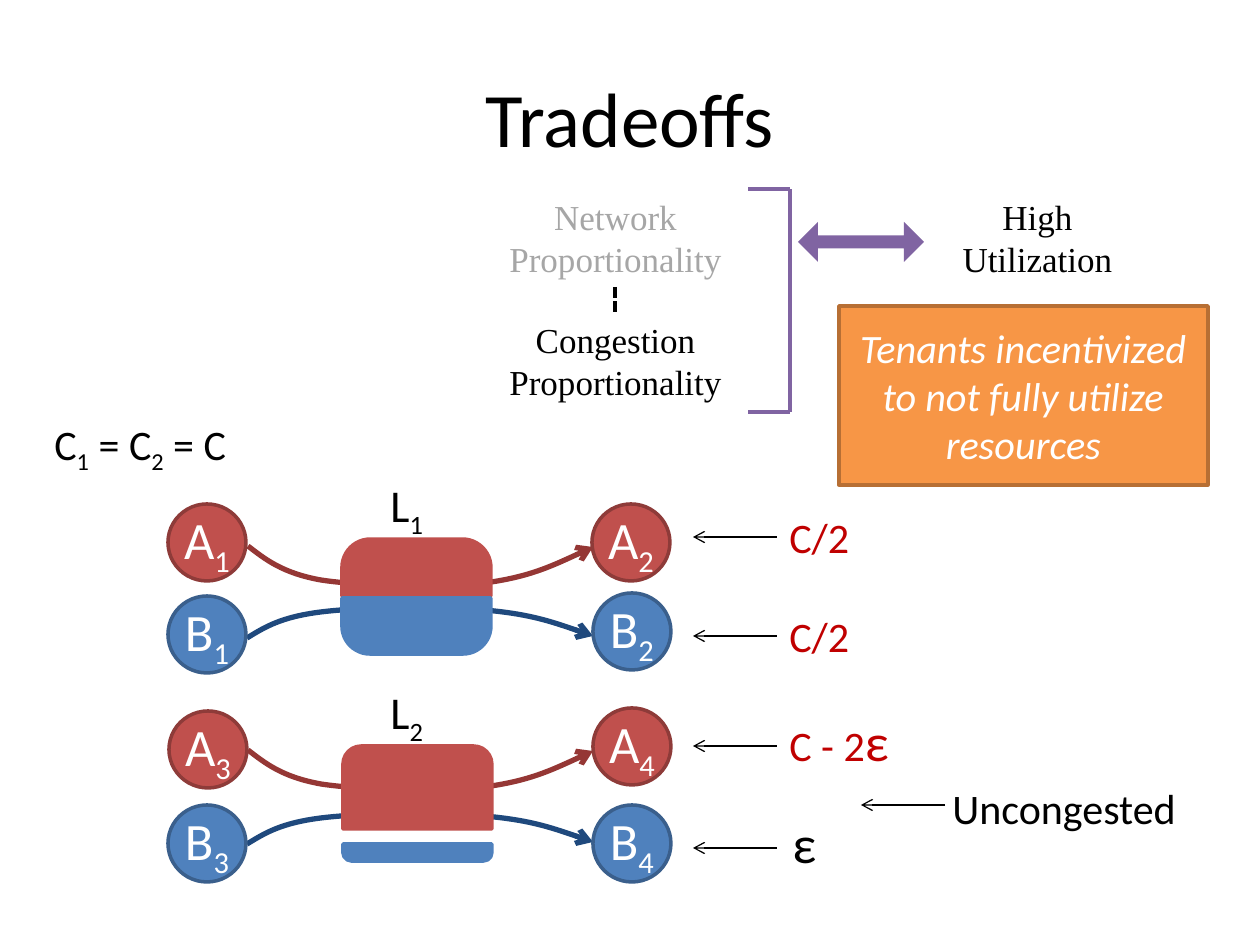
"""Build the Tradeoffs slide about two links shared by two tenants."""
import dataclasses
import typing

import pptx
import pptx.dml.color
import pptx.enum.dml
import pptx.enum.shapes
import pptx.enum.text
import pptx.oxml
import pptx.oxml.ns
import pptx.util

PIXELS_PER_INCH = 126
SLIDE_SIZE = (1260, 945)
RGBColor = pptx.dml.color.RGBColor
MSO_SHAPE = pptx.enum.shapes.MSO_SHAPE
PP_ALIGN = pptx.enum.text.PP_ALIGN
BLACK = RGBColor(0x00, 0x00, 0x00)
WHITE = RGBColor(0xFF, 0xFF, 0xFF)
GRAY = RGBColor(0xA6, 0xA6, 0xA6)
RED = RGBColor(0xC0, 0x50, 0x4D)
RED_EDGE = RGBColor(0x8E, 0x3B, 0x39)
RED_FLOW = RGBColor(0x95, 0x37, 0x35)
RED_TEXT = RGBColor(0xC0, 0x00, 0x00)
BLUE = RGBColor(0x4F, 0x81, 0xBD)
BLUE_EDGE = RGBColor(0x3A, 0x5F, 0x8C)
BLUE_FLOW = RGBColor(0x1F, 0x49, 0x7D)
PURPLE = RGBColor(0x80, 0x64, 0xA2)
ORANGE = RGBColor(0xF7, 0x96, 0x46)
ORANGE_EDGE = RGBColor(0xB7, 0x6F, 0x34)


class Box(typing.NamedTuple):
    left: int
    top: int
    width: int
    height: int


class Run(typing.NamedTuple):
    text: str
    size: int
    subscript: bool = False


@dataclasses.dataclass(frozen=True)
class TextStyle:
    color: RGBColor = BLACK
    font: str = "Calibri"
    italic: bool = False
    align: PP_ALIGN = PP_ALIGN.LEFT


@dataclasses.dataclass(frozen=True)
class Label:
    box: Box
    runs: tuple[Run, ...]
    style: TextStyle = TextStyle()
    wrap: bool = False


@dataclasses.dataclass(frozen=True)
class Solid:
    kind: MSO_SHAPE
    box: Box
    fill: RGBColor
    edge: RGBColor | None = None
    adjustments: tuple[float, ...] = ()
    runs: tuple[Run, ...] = ()
    style: TextStyle = TextStyle(WHITE, align=PP_ALIGN.CENTER)


@dataclasses.dataclass(frozen=True)
class Line:
    start: tuple[int, int]
    end: tuple[int, int]
    color: RGBColor = BLACK
    width: float = 0.75
    arrow: bool = False
    dashed: bool = False


@dataclasses.dataclass(frozen=True)
class Flow:
    points: tuple[tuple[int, int], ...]
    drop: int
    color: RGBColor


def px(value: int) -> int:
    return round(value * pptx.util.Inches(1) / PIXELS_PER_INCH)


def indexed(letter: str, index: int, size: int) -> tuple[Run, Run]:
    return Run(letter, size), Run(str(index), size, True)


def write(frame, runs: tuple[Run, ...], style: TextStyle) -> None:
    paragraph = frame.paragraphs[0]
    paragraph.alignment = style.align
    for part in runs:
        run = paragraph.add_run()
        run.text = part.text
        run.font.size = pptx.util.Pt(part.size)
        run.font.name = style.font
        run.font.italic = style.italic
        run.font.color.rgb = style.color
        if part.subscript:
            run.font._element.set("baseline", "-25000")


def draw_label(shapes, label: Label) -> None:
    frame = shapes.add_textbox(*map(px, label.box)).text_frame
    frame.word_wrap = label.wrap
    frame.auto_size = pptx.enum.text.MSO_AUTO_SIZE.SHAPE_TO_FIT_TEXT
    write(frame, label.runs, label.style)


def draw_solid(shapes, solid: Solid) -> None:
    shape = shapes.add_shape(solid.kind, *map(px, solid.box))
    shape.shadow.inherit = False
    for index, value in enumerate(solid.adjustments):
        shape.adjustments[index] = value
    shape.fill.solid()
    shape.fill.fore_color.rgb = solid.fill
    if solid.edge is None:
        shape.line.fill.background()
    else:
        shape.line.color.rgb = solid.edge
        shape.line.width = pptx.util.Pt(2)
    if solid.runs:
        frame = shape.text_frame
        frame.word_wrap = True
        frame.margin_left = frame.margin_right = 0
        frame.vertical_anchor = pptx.enum.text.MSO_ANCHOR.MIDDLE
        write(frame, solid.runs, solid.style)


def add_arrowhead(line) -> None:
    tail = pptx.oxml.parse_xml(f'<a:tailEnd {pptx.oxml.ns.nsdecls("a")} type="arrow"/>')
    line._get_or_add_ln().append(tail)


def draw_line(shapes, line: Line) -> None:
    straight = pptx.enum.shapes.MSO_CONNECTOR.STRAIGHT
    connector = shapes.add_connector(straight, *map(px, line.start + line.end))
    connector.line.color.rgb = line.color
    connector.line.width = pptx.util.Pt(line.width)
    if line.dashed:
        connector.line.dash_style = pptx.enum.dml.MSO_LINE.SQUARE_DOT
    if line.arrow:
        add_arrowhead(connector.line)
    effects = pptx.oxml.parse_xml(f'<a:effectLst {pptx.oxml.ns.nsdecls("a")}/>')
    connector._element.spPr.append(effects)


def draw_flow(shapes, flow: Flow) -> None:
    points = [(px(x), px(y + flow.drop)) for x, y in flow.points]
    builder = shapes.build_freeform(*points[0])
    builder.add_line_segments(points[1:], close=False)
    shape = builder.convert_to_shape()
    segments = shape._element.xpath(".//a:lnTo")
    for first in range(0, len(segments), 3):
        curve = pptx.oxml.parse_xml(f'<a:cubicBezTo {pptx.oxml.ns.nsdecls("a")}/>')
        segments[first].addprevious(curve)
        for segment in segments[first:first + 3]:
            curve.append(segment[0])
            segment.getparent().remove(segment)
    shape.shadow.inherit = False
    shape.fill.background()
    shape.line.color.rgb = flow.color
    shape.line.width = pptx.util.Pt(3)
    add_arrowhead(shape.line)


def main() -> None:
    presentation = pptx.Presentation()
    presentation.slide_width, presentation.slide_height = map(px, SLIDE_SIZE)
    slide = presentation.slides.add_slide(presentation.slide_layouts[5])
    shapes = slide.shapes
    title = shapes.title
    title.left, title.top, title.width, title.height = map(px, Box(63, 38, 1134, 158))
    title.text_frame.vertical_anchor = pptx.enum.text.MSO_ANCHOR.MIDDLE
    write(title.text_frame, (Run("Tradeoffs", 44),), TextStyle(align=PP_ALIGN.CENTER))

    red_path = ((248, 546), (265, 559), (282, 573), (321, 580), (360, 586),
                (438, 588), (484, 583), (529, 577), (561, 562), (593, 547))
    blue_path = ((247, 638), (265, 627), (281, 617), (321, 612), (360, 607),
                 (438, 606), (484, 610), (530, 614), (562, 625), (593, 636))
    for flow in (Flow(red_path, 0, RED_FLOW), Flow(blue_path, 0, BLUE_FLOW),
                 Flow(red_path, 204, RED_FLOW), Flow(blue_path, 206, BLUE_FLOW)):
        draw_flow(shapes, flow)

    for letter, index, left, top in (("B", 1, 168, 596), ("B", 3, 168, 805), ("A", 1, 168, 504),
                                     ("A", 3, 169, 711), ("B", 2, 593, 593), ("B", 4, 593, 805),
                                     ("A", 2, 592, 504), ("A", 4, 593, 708)):
        fill, edge = (RED, RED_EDGE) if letter == "A" else (BLUE, BLUE_EDGE)
        draw_solid(shapes, Solid(MSO_SHAPE.OVAL, Box(left, top, 78, 77), fill, edge,
                                 runs=indexed(letter, index, 30)))

    for left, top, height, color, adjustments in (
            (343, 746, 83, RED, (0.22, 0)), (343, 844, 17, BLUE, (0, 0.5)),
            (342, 539, 57, RED, (0.5, 0)), (342, 598, 56, BLUE, (0, 0.5))):
        draw_solid(shapes, Solid(MSO_SHAPE.ROUND_2_SAME_RECTANGLE, Box(left, top, 149, height),
                                 color, color, adjustments))
    draw_solid(shapes, Solid(MSO_SHAPE.LEFT_RIGHT_ARROW, Box(798, 222, 126, 40), PURPLE,
                             adjustments=(0.33, 0.5)))
    draw_solid(shapes, Solid(
        MSO_SHAPE.RECTANGLE, Box(839, 306, 369, 179), ORANGE, ORANGE_EDGE,
        runs=(Run("Tenants incentivized to not fully utilize resources", 23),),
        style=TextStyle(WHITE, italic=True, align=PP_ALIGN.CENTER)))

    rate = TextStyle(RED_TEXT)
    goal = TextStyle(font="Times New Roman", align=PP_ALIGN.CENTER)
    for label in (
            Label(Box(378, 471, 60, 68), indexed("L", 1, 26)),
            Label(Box(378, 678, 60, 68), indexed("L", 2, 26)),
            Label(Box(42, 412, 202, 63), (*indexed("C", 1, 24), Run(" = C", 24),
                                          Run("2", 24, True), Run(" = C", 24))),
            Label(Box(777, 505, 86, 63), (Run("C/2", 24),), rate),
            Label(Box(777, 604, 86, 63), (Run("C/2", 24),), rate),
            Label(Box(777, 703, 126, 77), (Run("C - 2", 24), Run("ε", 30)), rate),
            Label(Box(780, 805, 49, 77), (Run("ε", 30),)),
            Label(Box(940, 776, 251, 63), (Run("Uncongested", 24),)),
            Label(Box(441, 189, 349, 97), (Run("Network Proportionality", 20),),
                  dataclasses.replace(goal, color=GRAY), True),
            Label(Box(441, 312, 349, 97), (Run("Congestion Proportionality", 20),), goal, True),
            Label(Box(914, 189, 247, 97), (Run("High Utilization", 20),), goal, True)):
        draw_label(shapes, label)

    for right, y in ((777, 537), (777, 636), (777, 746), (777, 848), (945, 805)):
        draw_line(shapes, Line((right, y), (right - 84, y), arrow=True))
    draw_line(shapes, Line((615, 287), (615, 312), width=2, dashed=True))
    bracket = shapes.add_group_shape()
    for start, end in (((790, 189), (748, 189)), ((790, 412), (748, 412)),
                       ((790, 189), (790, 412))):
        draw_line(bracket.shapes, Line(start, end, PURPLE, 2))
    presentation.save("out.pptx")


if __name__ == "__main__":
    main()
